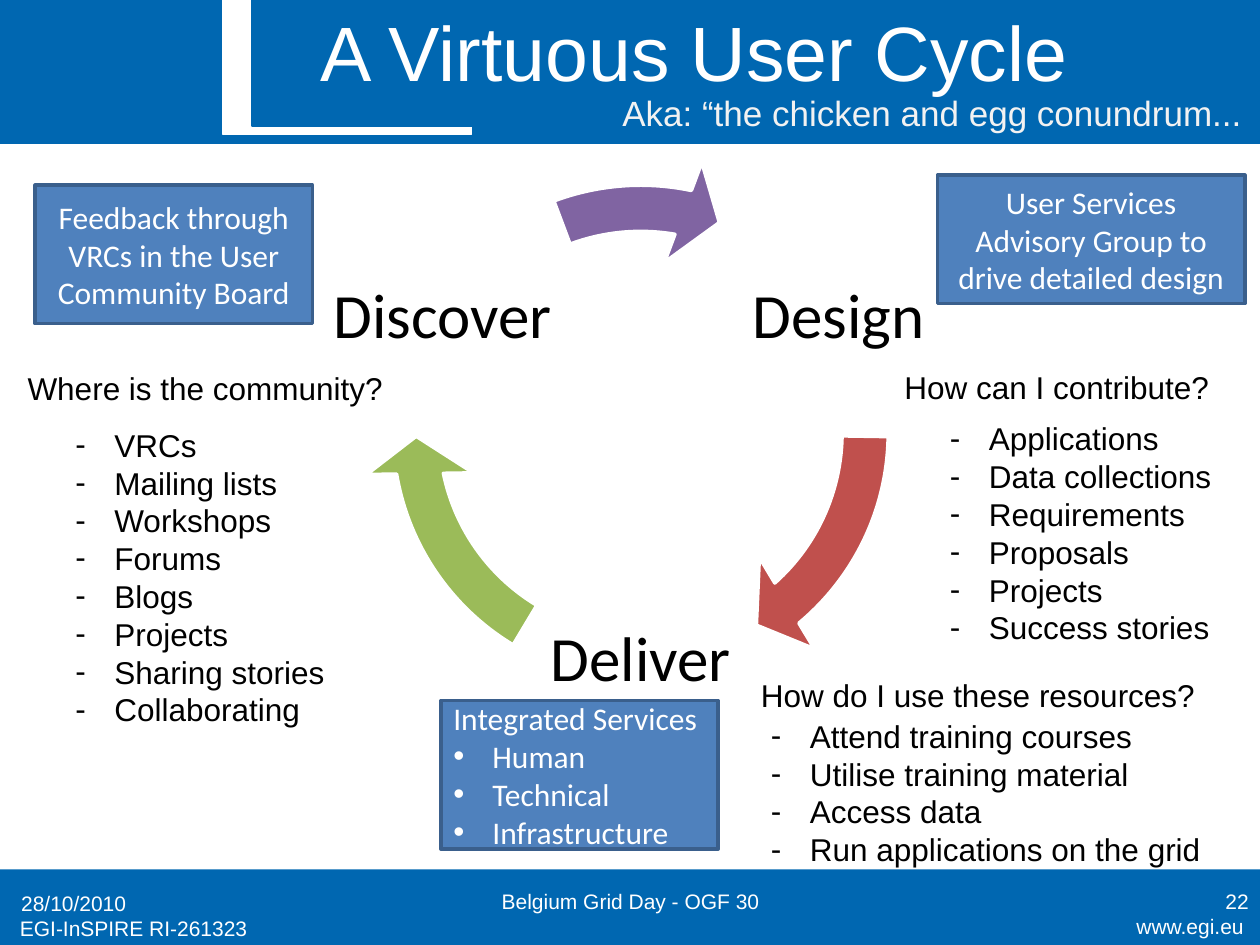
from dataclasses import dataclass

from lxml import etree
from pptx import Presentation
from pptx.dml.color import RGBColor
from pptx.enum.shapes import MSO_SHAPE
from pptx.enum.text import MSO_ANCHOR, MSO_AUTO_SIZE, PP_ALIGN
from pptx.oxml.ns import qn
from pptx.util import Inches, Pt

LEFT, CENTER, RIGHT = PP_ALIGN.LEFT, PP_ALIGN.CENTER, PP_ALIGN.RIGHT
TOP, MIDDLE = MSO_ANCHOR.TOP, MSO_ANCHOR.MIDDLE
RECTANGLE, ARROW = MSO_SHAPE.RECTANGLE, MSO_SHAPE.CIRCULAR_ARROW


@dataclass(frozen=True)
class Theme:
    brand: str = "0067B1"
    white: str = "FFFFFF"
    black: str = "000000"
    subtitle: str = "F2F2F2"
    callout: str = "4F81BD"
    callout_line: str = "3A5F8C"
    red: str = "C0504D"
    green: str = "9BBB59"
    purple: str = "8064A2"
    sans: str = "Arial"
    rounded: str = "Calibri"
    title_size: int = 44
    stage_size: int = 36
    subtitle_size: int = 20
    body_size: int = 18
    footer_size: int = 12


THEME = Theme()
WIDTH, HEIGHT = 10, 7.5
HEADER_HEIGHT, FOOTER_HEIGHT = 1.14, 0.6
TAB_LEFT, TAB_WIDTH, TAB_HEIGHT, TAB_REACH, TAB_STEPS = 1.77, 1.97, 1.07, 0.79, 40
INDENT = 0.31

TITLE = "A Virtuous User Cycle"
SUBTITLE = "Aka: “the chicken and egg conundrum..."
FOOTERS = [
    ("www.egi.eu", (8.39, 7.2, 1.58, 0.31), RIGHT, TOP),
    ("EGI-InSPIRE RI-261323", (0.06, 7.22, 2.5, 0.31), LEFT, TOP),
    ("28/10/2010", (0.07, 6.97, 2.33, 0.4), LEFT, MIDDLE),
    ("Belgium Grid Day - OGF 30", (3.42, 6.95, 3.17, 0.4), CENTER, MIDDLE),
    ("22", (7.68, 6.95, 2.33, 0.4), RIGHT, MIDDLE),
]
CYCLE_LEFT, CYCLE_TOP, CYCLE_SIZE = 2.88, 1.23, 4.41
STAGE_SIZE = 1.87
STAGES = [
    ("Design", 5.72, 1.59, THEME.red, 49.36, 0.89),
    ("Deliver", 4.15, 4.31, THEME.green, 169.5, 121.03),
    ("Discover", 2.58, 1.59, THEME.purple, 280.91, 249.48),
]
ARROW_THICKNESS, ARROW_HEAD_ANGLE, ARROW_HEAD_WIDTH = 0.083, 9.61, 0.096
CALLOUTS = [
    (["Integrated Services"], ["Human", "Technical", "Infrastructure"],
     (3.5, 5.56, 2.2, 1.18), LEFT),
    (["Feedback through VRCs in the User Community Board"], [],
     (0.28, 1.47, 2.2, 1.1), CENTER),
    (["User Services Advisory Group to drive detailed design"], [],
     (7.44, 1.39, 2.44, 1.02), CENTER),
]
QUESTIONS = [
    ("Where is the community?", (0.12, 2.88, 3.05, 0.4),
     ["VRCs", "Mailing lists", "Workshops", "Forums", "Blogs", "Projects",
      "Sharing stories", "Collaborating"], (0.5, 3.33, 2.2, 2.83)),
    ("How can I contribute?", (7.08, 2.87, 2.64, 0.4),
     ["Applications", "Data collections", "Requirements", "Proposals",
      "Projects", "Success stories"], (7.44, 3.28, 2.3, 1.92)),
    ("How do I use these resources?", (5.94, 5.32, 3.68, 0.4),
     ["Attend training courses", "Utilise training material", "Access data",
      "Run applications on the grid"], (6.02, 5.64, 3.64, 1.62)),
]


def color(value):
    return RGBColor.from_string(value)


def apply(target, values):
    for name, value in values.items():
        setattr(target, name, value)


def add_bullet(para, mark):
    properties = para._p.get_or_add_pPr()
    properties.set("marL", str(Inches(INDENT)))
    properties.set("indent", str(-Inches(INDENT)))
    etree.SubElement(properties, qn("a:buFont")).set("typeface", THEME.sans)
    etree.SubElement(properties, qn("a:buChar")).set("char", mark)


def write(box, plain, size, ink, font=THEME.sans, align=LEFT, anchor=TOP,
          bullets=(), mark="-", spacing=1.0, wrap=True):
    frame = box.text_frame
    apply(frame, {"word_wrap": wrap, "vertical_anchor": anchor,
                  "auto_size": MSO_AUTO_SIZE.NONE})
    lines = [(text, False) for text in plain] + [(text, True) for text in bullets]
    for index, (text, bulleted) in enumerate(lines):
        para = frame.add_paragraph() if index else frame.paragraphs[0]
        if bulleted:
            add_bullet(para, mark)
        apply(para, {"alignment": align, "line_spacing": spacing})
        span = para.add_run()
        span.text = text
        apply(span.font, {"name": font, "size": Pt(size)})
        span.font.color.rgb = color(ink)


def paint(shape, fill, line, width):
    shape.shadow.inherit = False
    shape.fill.solid()
    shape.fill.fore_color.rgb = color(fill)
    shape.line.color.rgb = color(line)
    shape.line.width = Pt(width)
    return shape


def add_shape(page, kind, place, fill, line, width=0.75):
    shape = page.shapes.add_shape(kind, *map(Inches, place))
    return paint(shape, fill, line, width)


def add_text(page, place, plain, size, ink, **options):
    box = page.shapes.add_textbox(*map(Inches, place))
    write(box, plain, size, ink, **options)
    return box


def add_header_tab(page):
    right, reach = TAB_LEFT + TAB_WIDTH, TAB_LEFT + TAB_REACH
    curve = []
    for step in range(TAB_STEPS + 1):
        t = step / TAB_STEPS
        s = 1 - t
        x = TAB_LEFT * (s ** 3 + 3 * s * t * t) + reach * (3 * s * s * t + t ** 3)
        curve.append((x, TAB_HEIGHT * (s ** 3 + 3 * s * s * t)))
    builder = page.shapes.build_freeform(right, 0, scale=Inches(1))
    builder.add_line_segments([(right, TAB_HEIGHT)] + curve, close=True)
    paint(builder.convert_to_shape(), THEME.brand, THEME.brand, 0.75)


def add_bands(page):
    add_shape(page, RECTANGLE, (0, HEIGHT - FOOTER_HEIGHT, WIDTH, FOOTER_HEIGHT),
              THEME.brand, THEME.brand).line.fill.background()
    add_shape(page, RECTANGLE, (0, 0, WIDTH, HEADER_HEIGHT), THEME.brand, THEME.brand)
    add_shape(page, RECTANGLE, (TAB_LEFT, 0, TAB_WIDTH, TAB_HEIGHT),
              THEME.white, THEME.white)
    add_header_tab(page)


def add_title(page):
    title = page.shapes.title
    apply(title, {"left": Inches(2.24), "top": Inches(0.05),
                  "width": Inches(6.54), "height": Inches(0.71)})
    write(title, [TITLE], THEME.title_size, THEME.white, align=CENTER, anchor=MIDDLE)
    page.shapes.element.append(title.element)
    add_text(page, (4.84, 0.68, 5.25, 0.44), [SUBTITLE], THEME.subtitle_size,
             THEME.subtitle, wrap=False)


def add_cycle(page):
    units = 60000 / 100000
    for name, left, top, fill, end, start in STAGES:
        box = add_text(page, (left, top, STAGE_SIZE, STAGE_SIZE), [name],
                       THEME.stage_size, THEME.black, font=THEME.rounded,
                       align=CENTER, anchor=MIDDLE, spacing=0.9)
        apply(box.text_frame, {"margin_left": Inches(0.05),
                               "margin_right": Inches(0.05)})
        arrow = add_shape(page, ARROW, (CYCLE_LEFT, CYCLE_TOP, CYCLE_SIZE, CYCLE_SIZE),
                          fill, THEME.white, 2)
        values = (ARROW_THICKNESS, ARROW_HEAD_ANGLE * units, end * units,
                  start * units, ARROW_HEAD_WIDTH)
        for index, value in enumerate(values):
            arrow.adjustments[index] = value


def main():
    deck = Presentation()
    apply(deck, {"slide_width": Inches(WIDTH), "slide_height": Inches(HEIGHT)})
    page = deck.slides.add_slide(deck.slide_layouts.get_by_name("Title Only"))
    add_bands(page)
    add_title(page)
    add_cycle(page)
    for text, place, align, anchor in FOOTERS:
        add_text(page, place, [text], THEME.footer_size, THEME.white,
                 align=align, anchor=anchor)
    for plain, bullets, place, align in CALLOUTS:
        box = add_shape(page, RECTANGLE, place, THEME.callout, THEME.callout_line, 2)
        write(box, plain, THEME.body_size, THEME.white, font=THEME.rounded,
              align=align, anchor=MIDDLE, bullets=bullets, mark="•")
    for question, place, answers, answers_place in QUESTIONS:
        add_text(page, place, [question], THEME.body_size, THEME.black, wrap=False)
        add_text(page, answers_place, [], THEME.body_size, THEME.black,
                 bullets=answers, wrap=False)
    deck.save("out.pptx")


if __name__ == "__main__":
    main()
